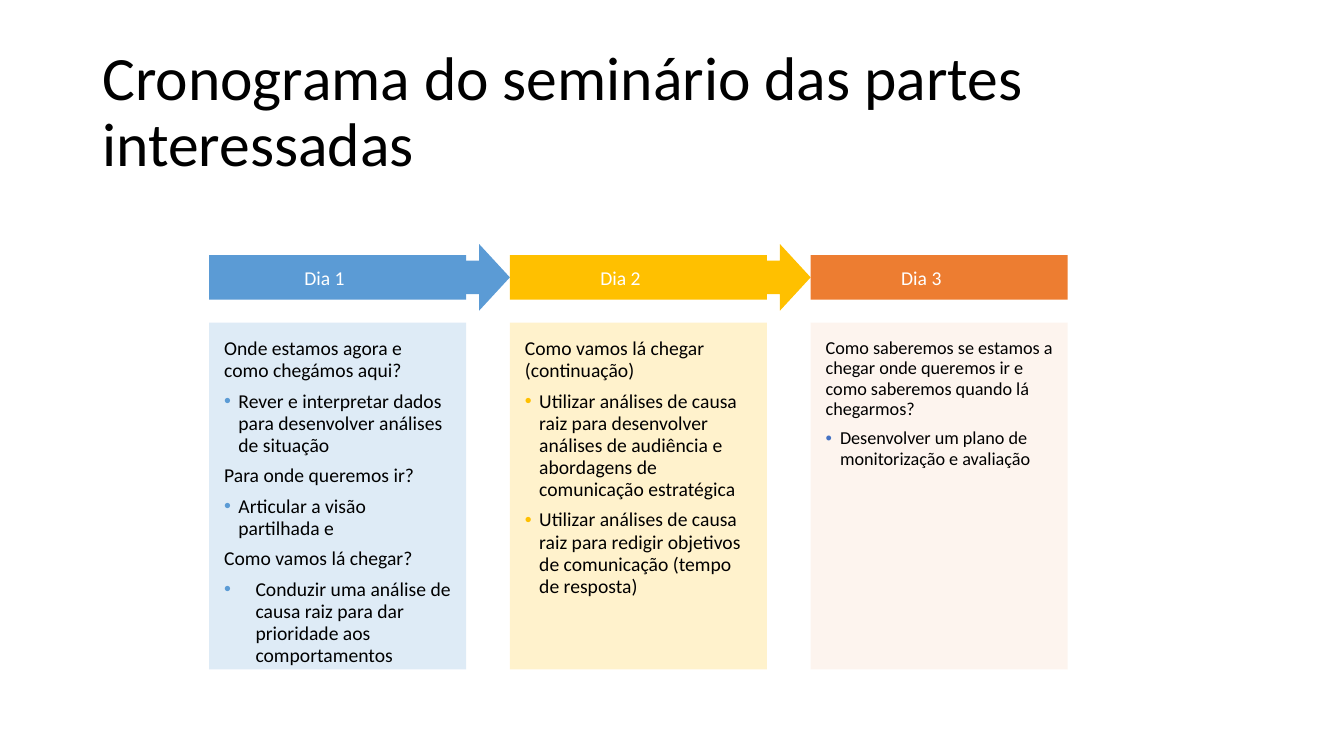
from dataclasses import dataclass

from lxml.etree import SubElement
from pptx import Presentation
from pptx.dml.color import RGBColor as RGB
from pptx.enum.shapes import MSO_SHAPE as Shape
from pptx.enum.text import MSO_ANCHOR as Anchor, PP_ALIGN as Align
from pptx.oxml.ns import qn
from pptx.util import Cm, Pt


@dataclass(frozen=True)
class Theme:
    font: str = "Calibri"
    black: str = "000000"
    white: str = "FFFFFF"
    blue: str = "5B9BD5"
    gold: str = "FFC000"
    orange: str = "ED7D31"
    peach: str = "F7CAAC"
    bullet_blue: str = "4472C4"
    tint: int = 20
    title_size: int = 44
    text_size: int = 14
    small_size: int = 13


@dataclass(frozen=True)
class Day:
    name: str
    name_indent: float
    color: str
    panel_color: str
    bullet_color: str
    size: int
    items: tuple  # (text, hanging indent in cm; 0 means no bullet)


THEME = Theme()
HANG, WIDE_HANG = 0.36, 0.79
DAYS = (
    Day("Dia 1", 1.9, THEME.blue, THEME.blue, THEME.blue, THEME.text_size, (
        ("Onde estamos agora e como chegámos aqui?", 0),
        ("Rever e interpretar dados para desenvolver análises de situação", HANG),
        ("Para onde queremos ir?", 0),
        ("Articular a visão partilhada e", HANG),
        ("Como vamos lá chegar?", 0),
        ("Conduzir uma análise de causa raiz para dar prioridade aos "
         "comportamentos", WIDE_HANG),
    )),
    Day("Dia 2", 1.78, THEME.gold, THEME.gold, THEME.gold, THEME.text_size, (
        ("Como vamos lá chegar (continuação)", 0),
        ("Utilizar análises de causa raiz para desenvolver análises de "
         "audiência e abordagens de comunicação estratégica", HANG),
        ("Utilizar análises de causa raiz para redigir objetivos de "
         "comunicação (tempo de resposta)", HANG),
    )),
    Day("Dia 3", 1.78, THEME.orange, THEME.peach, THEME.bullet_blue,
        THEME.small_size, (
            ("Como saberemos se estamos a chegar onde queremos ir e como "
             "saberemos quando lá chegarmos?", 0),
            ("Desenvolver um plano de monitorização e avaliação", HANG),
        )),
)

# Column geometry in centimetres
LEFT, PITCH, WIDTH = 5.27, 7.58, 6.48
HEADER_TOP, HEADER_HEIGHT = 6.43, 1.12
PANEL_TOP, PANEL_HEIGHT = 8.13, 8.74
ARROW_WIDTH, ARROW_HEIGHT = 1.55, 1.68


class SlideBuilder:
    def __init__(self, slide, theme):
        self.slide = slide
        self.theme = theme

    def shape(self, kind, box, color, alpha=None):
        """Add a borderless shape; alpha is its opacity in percent."""
        sp = self.slide.shapes.add_shape(kind, *map(Cm, box))
        sp.shadow.inherit = False
        sp.fill.solid()
        sp.fill.fore_color.rgb = RGB.from_string(color)
        sp.line.fill.background()
        if alpha is not None:
            clr = sp._element.spPr.find(".//" + qn("a:srgbClr"))
            SubElement(clr, qn("a:alpha"), val=str(alpha * 1000))
        return sp

    def frame(self, sp, anchor, margin_x, margin_y):
        tf = sp.text_frame
        tf.word_wrap = True
        tf.vertical_anchor = anchor
        tf.margin_left = tf.margin_right = Cm(margin_x)
        tf.margin_top = tf.margin_bottom = Cm(margin_y)
        return tf

    def paragraph(self, p, text, size, color, spacing=1.0, indent=0):
        p.text = text
        p.alignment = Align.LEFT
        p.line_spacing = spacing
        p.font.name = self.theme.font
        p.font.size = Pt(size)
        p.font.color.rgb = RGB.from_string(color)
        if indent:
            p._p.get_or_add_pPr().set("marL", str(Cm(indent)))

    def bullet(self, p, hang, color):
        pPr = p._p.get_or_add_pPr()
        pPr.set("indent", str(-Cm(hang)))
        mark = [
            pPr.makeelement(qn("a:buClr")),
            pPr.makeelement(qn("a:buFont"), typeface="Arial"),
            pPr.makeelement(qn("a:buChar"), char="•"),
        ]
        SubElement(mark[0], qn("a:srgbClr"), val=color)
        font_defaults = pPr.find(qn("a:defRPr"))
        for el in mark:
            font_defaults.addprevious(el)

    def title(self, text):
        sp = self.slide.shapes.add_textbox(Cm(2.33), Cm(1.02), Cm(29.21), Cm(3.68))
        tf = self.frame(sp, Anchor.MIDDLE, 0.25, 0.13)
        self.paragraph(tf.paragraphs[0], text, self.theme.title_size,
                       self.theme.black, 0.9)

    def arrow(self, day, left):
        """Point from one day's header to the next column."""
        top = HEADER_TOP + (HEADER_HEIGHT - ARROW_HEIGHT) / 2
        box = (left + PITCH - ARROW_WIDTH, top, ARROW_WIDTH, ARROW_HEIGHT)
        self.shape(Shape.RIGHT_ARROW, box, day.color)

    def panel(self, day, left):
        sp = self.shape(Shape.RECTANGLE, (left, PANEL_TOP, WIDTH, PANEL_HEIGHT),
                        day.panel_color, self.theme.tint)
        tf = self.frame(sp, Anchor.TOP, 0.38, 0.38)
        for i, (text, hang) in enumerate(day.items):
            p = tf.add_paragraph() if i else tf.paragraphs[0]
            self.paragraph(p, text, day.size, self.theme.black, 0.94, hang)
            p.space_before = Pt(6 if i else 0)
            if hang:
                self.bullet(p, hang, day.bullet_color)

    def header(self, day, left):
        sp = self.shape(Shape.RECTANGLE, (left, HEADER_TOP, WIDTH, HEADER_HEIGHT),
                        day.color)
        tf = self.frame(sp, Anchor.MIDDLE, 0.5, 0.25)
        self.paragraph(tf.paragraphs[0], day.name, self.theme.text_size,
                       self.theme.white, indent=day.name_indent)


def main():
    prs = Presentation()
    prs.slide_width, prs.slide_height = Cm(33.87), Cm(19.05)
    s = SlideBuilder(prs.slides.add_slide(prs.slide_layouts[6]), THEME)

    columns = [(day, LEFT + i * PITCH) for i, day in enumerate(DAYS)]
    for day, left in columns[:-1]:
        s.arrow(day, left)
    for day, left in columns:
        s.panel(day, left)
        s.header(day, left)
    s.title("Cronograma do seminário das partes interessadas")

    prs.save("out.pptx")


if __name__ == "__main__":
    main()
